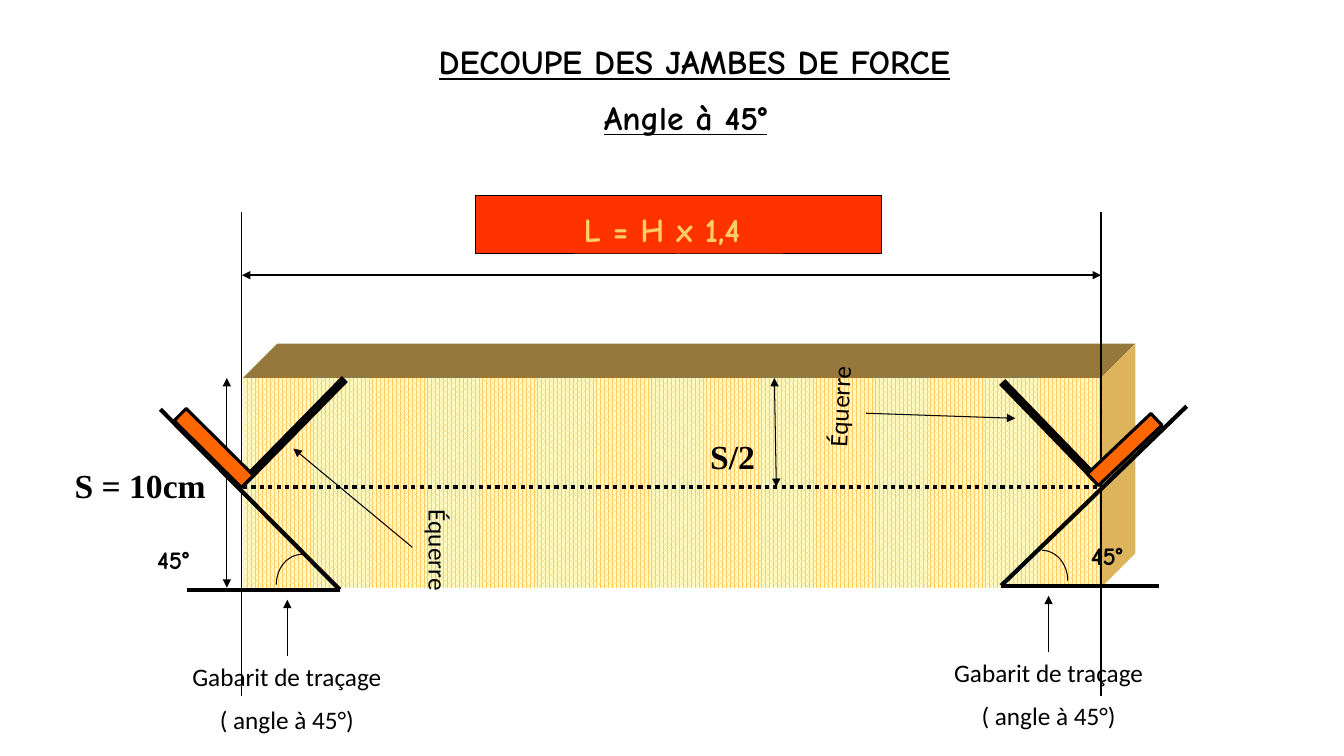
import pptx
import pptx.util
import pptx.dml.color
import pptx.enum.dml
import pptx.enum.shapes
import pptx.enum.text
import pptx.oxml.ns
import pptx.oxml.xmlchemy

Inches = pptx.util.Inches
COLORS = {
    "ink": "000000",
    "wood": "FFCC66",
    "wood_grain": "FFFFCC",
    "wood_top": "96783C",
    "wood_side": "DDB35C",
    "formula": "FF3300",
    "stock": "FF6600",
}
TITLE = {"name": "Comic Neue", "size": pptx.util.Pt(24), "bold": True, "underline": True}
FORMULA = {"name": "Comic Neue", "size": pptx.util.Pt(24), "bold": True}
MEASURE = {"name": "Times New Roman", "size": pptx.util.Pt(24), "bold": True}
ANGLE = {"name": "Comic Neue", "size": pptx.util.Pt(18), "bold": True}
NOTE = {"name": "Calibri", "size": pptx.util.Pt(18)}

SHAPES = pptx.enum.shapes.MSO_SHAPE
ALIGN = pptx.enum.text.PP_ALIGN
BEAM_LEFT, BEAM_RIGHT = 2.41, 10.92
BEAM_TOP, BEAM_BOTTOM = 3.75, 5.83
BEAM_MIDDLE = 4.83
DEPTH = 0.34


def rgb(color):
    return pptx.dml.color.RGBColor.from_string(COLORS[color])


def paint(shape, fill=None, width=None):
    shape.shadow.inherit = False
    if fill:
        shape.fill.solid()
        shape.fill.fore_color.rgb = rgb(fill)
    else:
        shape.fill.background()
    if width:
        shape.line.color.rgb = rgb("ink")
        shape.line.width = pptx.util.Pt(width)
    else:
        shape.line.fill.background()


def add_box(slide, box, fill=None, width=None, kind=SHAPES.RECTANGLE, rotation=0):
    shape = slide.shapes.add_shape(kind, *map(Inches, box))
    paint(shape, fill, width)
    shape.rotation = rotation
    return shape


def add_face(slide, corners, fill):
    points = [(Inches(x), Inches(y)) for x, y in corners]
    outline = slide.shapes.build_freeform(*points[0])
    outline.add_line_segments(points[1:], close=True)
    paint(outline.convert_to_shape(), fill)


def add_line(slide, start, end, width=0.75, arrows=(), dotted=False):
    line = slide.shapes.add_connector(
        pptx.enum.shapes.MSO_CONNECTOR.STRAIGHT, *map(Inches, (*start, *end)))
    line.line.color.rgb = rgb("ink")
    line.line.width = pptx.util.Pt(width)
    if dotted:
        line.line.dash_style = pptx.enum.dml.MSO_LINE.ROUND_DOT
    properties = line.element.spPr
    outline = properties.find(pptx.oxml.ns.qn("a:ln"))
    for arrow in arrows:
        tip = pptx.oxml.xmlchemy.OxmlElement(f"a:{arrow}")
        tip.set("type", "triangle")
        outline.append(tip)
    outline.addnext(pptx.oxml.xmlchemy.OxmlElement("a:effectLst"))


def add_text(slide, box, lines, style, color="ink", align=ALIGN.CENTER, wrap=False, rotation=0):
    label = slide.shapes.add_textbox(*map(Inches, box))
    label.rotation = rotation
    frame = label.text_frame
    frame.word_wrap = wrap
    for number, line in enumerate(lines):
        paragraph = frame.add_paragraph() if number else frame.paragraphs[0]
        paragraph.alignment = align
        if number:
            paragraph.space_before = pptx.util.Pt(9)
        run = paragraph.add_run()
        run.text = line
        for attribute, value in style.items():
            setattr(run.font, attribute, value)
        run.font.color.rgb = rgb(color)


def add_beam(slide):
    front = add_box(slide, (BEAM_LEFT, BEAM_TOP, BEAM_RIGHT - BEAM_LEFT, BEAM_BOTTOM - BEAM_TOP))
    front.fill.patterned()
    front.fill.pattern = pptx.enum.dml.MSO_PATTERN.PERCENT_75
    front.fill.fore_color.rgb = rgb("wood")
    front.fill.back_color.rgb = rgb("wood_grain")
    back_right, back_top = BEAM_RIGHT + DEPTH, BEAM_TOP - DEPTH
    add_face(slide, [(BEAM_LEFT, BEAM_TOP), (BEAM_LEFT + DEPTH, back_top),
                     (back_right, back_top), (BEAM_RIGHT, BEAM_TOP)], "wood_top")
    add_face(slide, [(BEAM_RIGHT, BEAM_TOP), (back_right, back_top),
                     (back_right, BEAM_BOTTOM - DEPTH), (BEAM_RIGHT, BEAM_BOTTOM)], "wood_side")


def add_dimensions(slide):
    both = ("headEnd", "tailEnd")
    add_text(slide, (6.94, 4.28, 0.65, 0.51), ["S/2"], MEASURE)
    add_line(slide, (7.68, BEAM_TOP), (7.7, BEAM_MIDDLE), arrows=both)
    add_line(slide, (BEAM_LEFT, BEAM_MIDDLE), (BEAM_RIGHT, BEAM_MIDDLE), 3, dotted=True)
    for x in (2.4, BEAM_RIGHT):
        add_line(slide, (x, 2.1), (x, 6.9))
    add_line(slide, (2.4, 2.73), (BEAM_RIGHT, 2.73), 1.5, both)
    add_box(slide, (4.72, 1.94, 4.02, 0.58), "formula", 0.75)
    add_text(slide, (5.29, 2.02, 2.55, 0.5), ["L = H x 1,4"], FORMULA, "wood")
    add_line(slide, (2.25, BEAM_TOP), (2.25, BEAM_BOTTOM), arrows=both)
    add_text(slide, (0.63, 4.56, 1.52, 0.51), ["S = 10cm"], MEASURE)


def add_template(slide, apex, blade_tip, base_end, arc_left, arc_angles, angle_left,
                 pointer, note_left, note_width):
    y = apex[1]
    add_line(slide, apex, blade_tip, 3)
    add_line(slide, apex, (base_end, y), 3)
    arc = add_box(slide, (arc_left, y - 0.35, 0.51, 0.6), width=0.75, kind=SHAPES.ARC)
    for position, angle in enumerate(arc_angles):
        arc.adjustments[position] = angle * 0.6
    add_text(slide, (angle_left, y - 0.5, 1.15, 0.4), ["45°"], ANGLE,
             align=ALIGN.LEFT, wrap=True)
    add_line(slide, (pointer, y + 0.66), (pointer, y + 0.1), arrows=("tailEnd",))
    add_text(slide, (note_left, y + 0.66, note_width, 0.85),
             ["Gabarit de traçage", "( angle à 45°)"], NOTE, wrap=True)


def add_square(slide, heel, toe, stock, tilt, pointer, label, turn):
    add_line(slide, heel, toe, 6)
    add_box(slide, stock, "stock", 2.25, rotation=tilt)
    add_line(slide, *pointer, arrows=("tailEnd",))
    add_text(slide, label, ["Équerre"], NOTE, align=ALIGN.LEFT, wrap=True, rotation=turn)


def main():
    deck = pptx.Presentation()
    deck.slide_width, deck.slide_height = Inches(13.33), Inches(7.5)
    slide = deck.slides.add_slide(deck.slide_layouts[6])
    add_beam(slide)
    add_text(slide, (3.9, 0.36, 5.97, 0.5), ["DECOUPE DES JAMBES DE FORCE"], TITLE)
    add_text(slide, (5.72, 0.91, 2.16, 0.5), ["Angle à 45°"], TITLE)
    add_dimensions(slide)
    add_template(slide, (3.37, 5.85), (1.59, 4.06), 1.85, 2.74, (180, 270), 1.46,
                 2.85, 1.62, 2.45)
    add_square(slide, (2.42, 4.78), (3.42, 3.76), (1.65, 4.36, 0.94, 0.17), 44.8,
               ((4.09, 5.43), (2.91, 4.45)), (3.8, 5.31, 1.1, 0.4), 90)
    add_square(slide, (10.87, 4.75), (9.94, 3.79), (10.72, 4.38, 0.87, 0.16), 316.5,
               ((8.59, 4.1), (10.07, 4.15)), (7.7, 3.7, 1.26, 0.4), 273)
    add_template(slide, (9.93, 5.81), (11.77, 4.03), 11.5, 10.08, (270, 0), 10.72,
                 10.4, 9.14, 2.52)
    deck.save("out.pptx")


if __name__ == "__main__":
    main()
